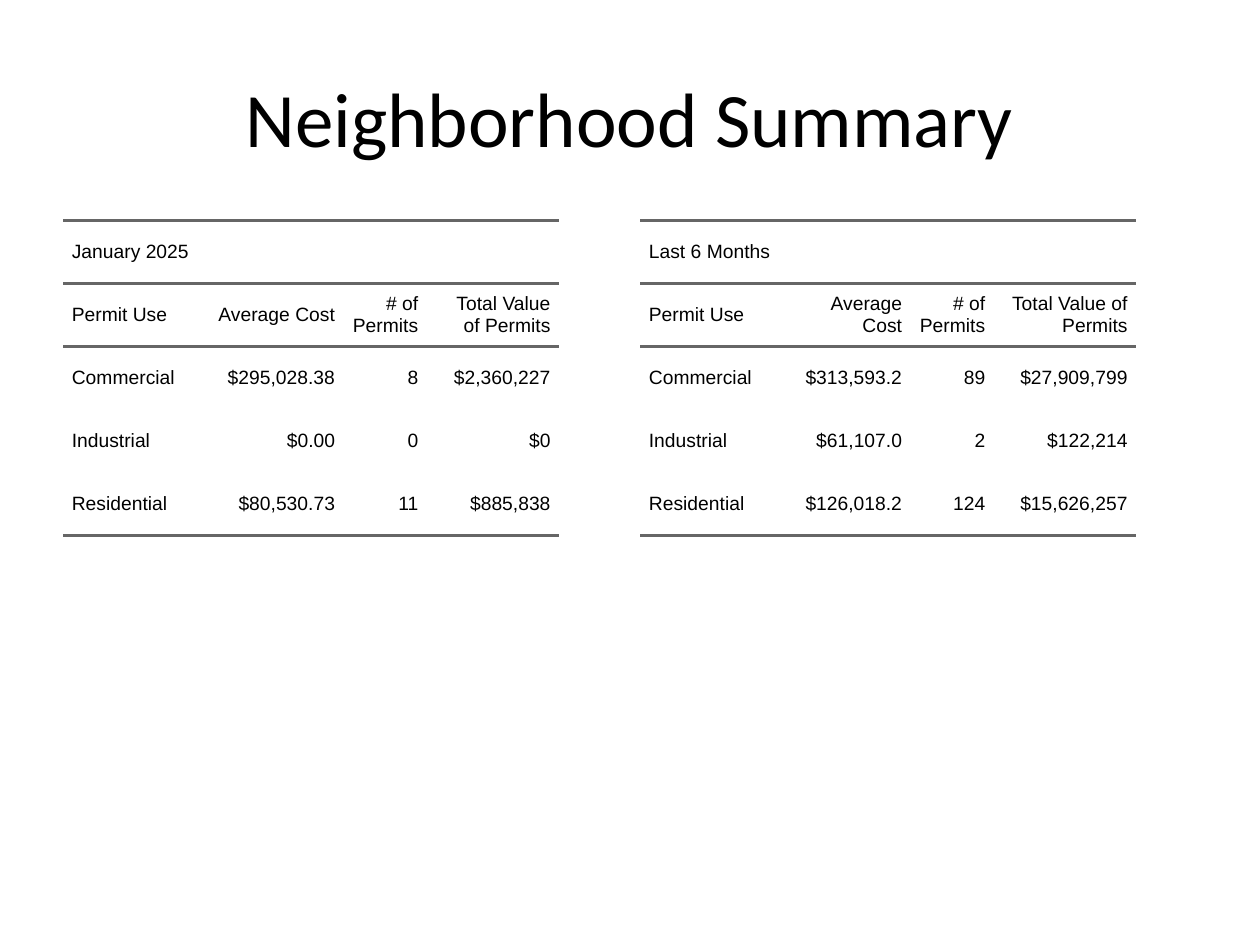
from pptx import Presentation
from pptx.dml.color import RGBColor
from pptx.enum.text import MSO_ANCHOR, PP_ALIGN
from pptx.oxml import parse_xml
from pptx.oxml.ns import nsdecls, qn
from pptx.util import Pt

LEFT, RIGHT, CENTER = PP_ALIGN.LEFT, PP_ALIGN.RIGHT, PP_ALIGN.CENTER
MIDDLE = MSO_ANCHOR.MIDDLE

# Content
TITLE = "Neighborhood Summary"
HEAD = ("Permit Use", "Average Cost", "# of Permits", "Total Value of Permits")
TABLES = [
    {"name": "January 2025", "left": 50, "cols": (110, 113, 66, 105), "rows": [
        ("Commercial", "$295,028.38", "8", "$2,360,227"),
        ("Industrial", "$0.00", "0", "$0"),
        ("Residential", "$80,530.73", "11", "$885,838")]},
    {"name": "Last 6 Months", "left": 508, "cols": (110, 105, 66, 113), "rows": [
        ("Commercial", "$313,593.2", "89", "$27,909,799"),
        ("Industrial", "$61,107.0", "2", "$122,214"),
        ("Residential", "$126,018.2", "124", "$15,626,257")]},
]

# Style, lengths in px at 100 to the inch
COLORS = {"text": "000000", "rule": "666666"}
SCALE = 9144
TOP, WIDE, HIGH, ROW, PAD = 175, 442, 495, 50, 7
PLAIN = "{2D5ABB26-0587-4C30-8999-92F81FD0307C}"  # table style without grid


def px(n):
    return n * SCALE


def write(frame, text, font, size, align):
    para = frame.paragraphs[0]
    para.alignment = align
    run = para.add_run()
    run.text = text
    run.font.name = font
    run.font.size = Pt(size)
    run.font.color.rgb = RGBColor.from_string(COLORS["text"])
    return para


def rule(cell, sides):
    props = cell._tc.get_or_add_tcPr()
    for i, side in enumerate(sides):
        props.insert(i, parse_xml(
            f'<a:ln{side} {nsdecls("a")} w="{Pt(1.5)}"><a:solidFill>'
            f'<a:srgbClr val="{COLORS["rule"]}"/></a:solidFill></a:ln{side}>'))


def fill_cell(cell, text, align):
    cell.vertical_anchor = MIDDLE
    cell.margin_left = cell.margin_right = 0
    cell.margin_top = cell.margin_bottom = px(PAD)
    cell.fill.background()
    if text:
        para = write(cell.text_frame, text, "Arial", 11, align)
        para.space_before = para.space_after = Pt(5)
        props = para._p.get_or_add_pPr()
        for key, val in (("marL", px(PAD)), ("marR", px(PAD)), ("indent", 0)):
            props.set(key, str(val))


def add_summary(slide, data):
    cols = data["cols"]
    grid = [(data["name"], "", "", ""), HEAD, *data["rows"]]
    shape = slide.shapes.add_table(len(grid), len(cols), px(data["left"]),
                                   px(TOP), px(sum(cols)), px(ROW * len(grid)))
    table = shape.table
    table.first_row = table.horz_banding = False
    table._tbl.tblPr.find(qn("a:tableStyleId")).text = PLAIN
    for col, width in zip(table.columns, cols):
        col.width = px(width)
    table.cell(0, 0).merge(table.cell(0, len(cols) - 1))
    # Rules above and below both heading rows, and below the last row
    sides = {0: "TB", 1: "TB", len(grid) - 1: "B"}
    for r, line in enumerate(grid):
        table.rows[r].height = px(ROW)
        for c, text in enumerate(line):
            cell = table.cell(r, c)
            fill_cell(cell, text, RIGHT if c else LEFT)
            rule(cell, sides.get(r, ""))
    shape.width, shape.height = px(WIDE), px(HIGH)


def main():
    deck = Presentation()
    deck.slide_width, deck.slide_height = px(1000), px(750)
    slide = deck.slides.add_slide(deck.slide_layouts[5])

    # Title
    title = slide.shapes.title
    title.left, title.top, title.width, title.height = map(px, (50, 30, 900, 125))
    title.text_frame.vertical_anchor = MIDDLE
    write(title.text_frame, TITLE, "Calibri", 44, CENTER)

    # Tables
    for data in TABLES:
        add_summary(slide, data)

    deck.save("out.pptx")


if __name__ == "__main__":
    main()
